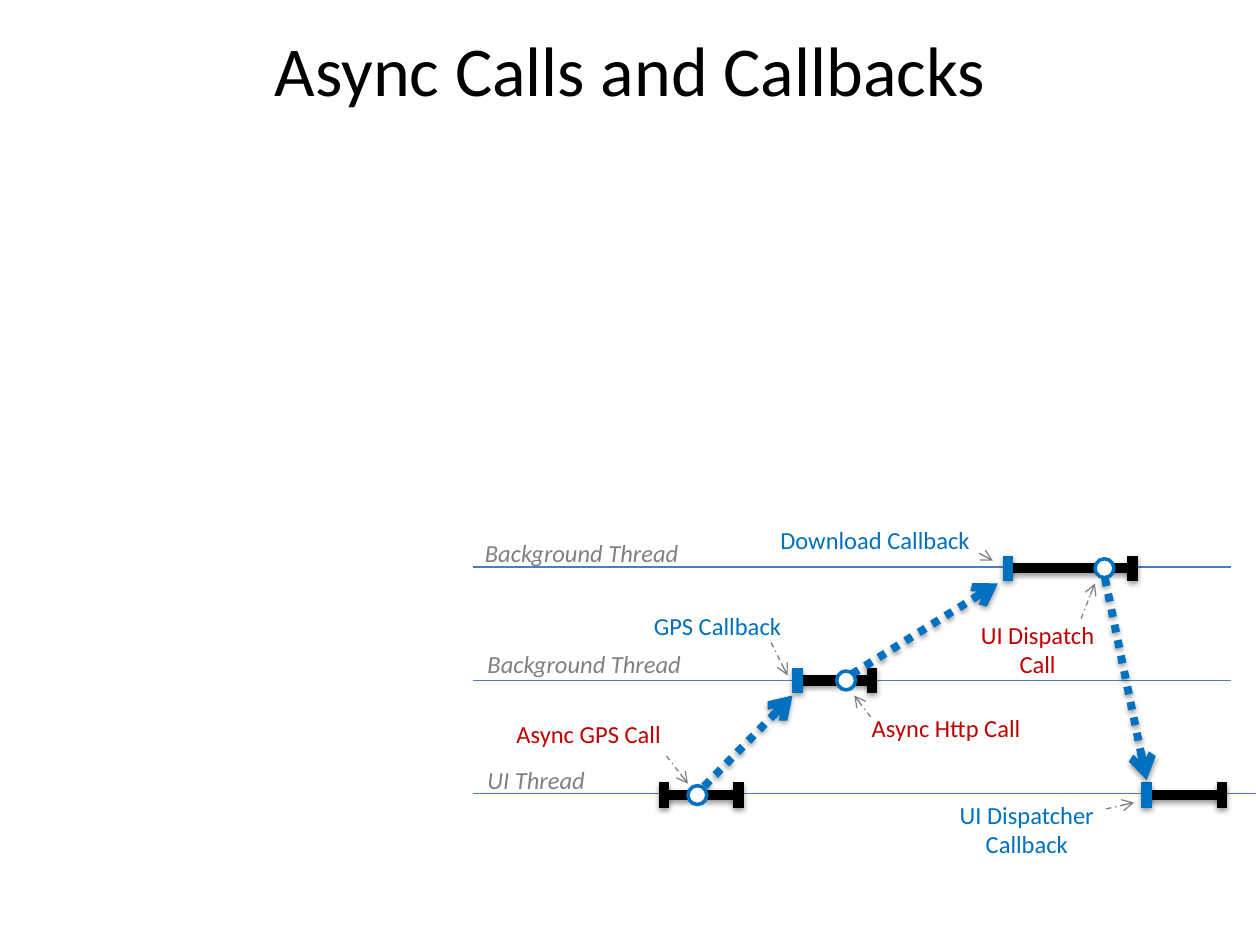
"""Build a timeline slide of asynchronous calls and callbacks across threads."""
import dataclasses
import typing

import lxml.etree
import pptx
import pptx.dml.color
import pptx.enum.dml
import pptx.enum.shapes
import pptx.enum.text
import pptx.oxml
import pptx.oxml.ns
import pptx.util

Point = typing.Tuple[float, float]
ALIGN = pptx.enum.text.PP_ALIGN
DASH = pptx.enum.dml.MSO_LINE
COLUMNS, ROWS = 100, 75
TOP_ROW, MIDDLE_ROW, BOTTOM_ROW = 45, 54, 63
CAP_HALF = 1
DOT_SIZE = 1.5


@dataclasses.dataclass(frozen=True)
class Theme:
    """Colours, font, type sizes and line widths."""
    font: str = "Calibri"
    title_size: float = 40
    label_size: float = 14
    black: str = "000000"
    white: str = "FFFFFF"
    thread: str = "4B7EBC"
    muted: str = "808080"
    callback: str = "0070C0"
    call: str = "C00000"
    thin: float = 0.75
    outline: float = 2
    flow: float = 4.5
    bar: float = 6


THEME = Theme()


@dataclasses.dataclass(frozen=True)
class Thread:
    """A named thread line with its label's corner."""
    name: str
    row: float
    end: float
    label_at: Point
    label_width: float


@dataclasses.dataclass(frozen=True)
class Run:
    """A stretch of work on a thread, with the column of the call it makes."""
    row: float
    start: float
    end: float
    start_color: str
    call: typing.Optional[float] = None


@dataclasses.dataclass(frozen=True)
class Label:
    """A caption and the pointer that leads from it."""
    text: str
    color: str
    at: Point
    size: Point
    pointer: typing.Tuple[Point, Point]
    align: typing.Any = ALIGN.CENTER


THREADS = (
    Thread("Background Thread", TOP_ROW, 97.7, (37.5, 42.2), 17.8),
    Thread("Background Thread", MIDDLE_ROW, 97.7, (37.7, 51), 17.8),
    Thread("UI Thread", BOTTOM_ROW, 99.7, (37.7, 60.2), 9.9),
)
RUNS = (
    Run(BOTTOM_ROW + 0.1, 52.7, 58.6, THEME.black, 55.35),
    Run(MIDDLE_ROW, 63.3, 69.2, THEME.callback, 67.15),
    Run(TOP_ROW + 0.1, 80, 89.9, THEME.callback, 87.65),
    Run(BOTTOM_ROW + 0.1, 91, 97, THEME.callback),
)
FLOWS = (
    ((55.9, 62.4), (62.9, 55.2)),
    ((67.6, 53.5), (79.2, 46.3)),
    ((87.7, 45.9), (91, 61.9)),
)
LABELS = (
    Label("Async GPS Call", THEME.call, (40, 56.6), (14.1, 3.4), ((52.9, 60), (54.6, 62.2)), ALIGN.LEFT),
    Label("GPS Callback", THEME.callback, (50.6, 48), (12.7, 3.4), ((61.2, 51), (62.5, 53.6))),
    Label("Async Http Call", THEME.call, (68.2, 56.1), (14.3, 3.4), ((69.1, 56.9), (67.8, 55.2)), ALIGN.LEFT),
    Label("Download Callback", THEME.callback, (60.7, 41.2), (17.5, 3.4), ((77.7, 43.9), (78.8, 44.5))),
    Label("UI Dispatch\nCall", THEME.call, (76.5, 48.7), (11.7, 5.7), ((85.8, 49.1), (86.9, 46.3))),
    Label("UI Dispatcher\nCallback", THEME.callback, (75, 63), (13, 5.7), ((87.8, 64.2), (90, 63.7))),
)


def grid(cells: float) -> int:
    """Convert grid cells to a length."""
    return pptx.util.Inches(cells * 10 / COLUMNS)


def rgb(color: str) -> pptx.dml.color.RGBColor:
    """Convert a hexadecimal colour."""
    return pptx.dml.color.RGBColor.from_string(color)


def write_text(frame, text: str, *, size: float, color: str, align=ALIGN.LEFT, italic: bool = False) -> None:
    """Fill a text frame with one formatted paragraph for each line."""
    frame.text = text
    for paragraph in frame.paragraphs:
        paragraph.alignment = align
        font = paragraph.runs[0].font
        font.name, font.size, font.italic = THEME.font, pptx.util.Pt(size), italic
        font.color.rgb = rgb(color)


def add_label(slide, text: str, at: Point, size: Point, *, color: str, align=ALIGN.LEFT, italic: bool = False) -> None:
    """Add an unwrapped caption."""
    box = slide.shapes.add_textbox(*map(grid, at + size))
    box.text_frame.word_wrap = False
    box.text_frame.auto_size = pptx.enum.text.MSO_AUTO_SIZE.SHAPE_TO_FIT_TEXT
    write_text(box.text_frame, text, size=THEME.label_size, color=color, align=align, italic=italic)


def add_line(slide, start: Point, end: Point, *, color: str, width: float,
             dash=None, arrow: bool = False, shadow: bool = False) -> None:
    """Add a straight line with optional dashes, arrowhead and shadow."""
    connector = slide.shapes.add_connector(
        pptx.enum.shapes.MSO_CONNECTOR.STRAIGHT, *map(grid, start + end))
    connector.line.color.rgb = rgb(color)
    connector.line.width = pptx.util.Pt(width)
    if dash is not None:
        connector.line.dash_style = dash
    name = pptx.oxml.ns.qn
    properties = connector._element.spPr
    if arrow:
        lxml.etree.SubElement(properties.find(name("a:ln")), name("a:tailEnd"), type="arrow")
    effects = lxml.etree.SubElement(properties, name("a:effectLst"))
    if shadow:
        outer = lxml.etree.SubElement(
            effects, name("a:outerShdw"), blurRad=str(pptx.util.Pt(3.1)),
            dist=str(pptx.util.Pt(1.6)), dir="5400000", rotWithShape="0")
        shade = lxml.etree.SubElement(outer, name("a:srgbClr"), val=THEME.black)
        lxml.etree.SubElement(shade, name("a:alpha"), val="38000")


def add_run(slide, run: Run) -> None:
    """Draw a run as a bar between two caps."""
    add_line(slide, (run.start, run.row), (run.end, run.row), color=THEME.black, width=THEME.bar, shadow=True)
    for column, color in ((run.start, run.start_color), (run.end, THEME.black)):
        add_line(slide, (column, run.row - CAP_HALF), (column, run.row + CAP_HALF),
                 color=color, width=THEME.bar, shadow=True)


def add_dot(slide, column: float, row: float) -> None:
    """Mark a call with a ring centred on a grid point."""
    dot = slide.shapes.add_shape(
        pptx.enum.shapes.MSO_SHAPE.OVAL, grid(column - DOT_SIZE / 2), grid(row - DOT_SIZE / 2),
        grid(DOT_SIZE), grid(DOT_SIZE))
    dot.shadow.inherit = False
    dot.fill.solid()
    dot.fill.fore_color.rgb = rgb(THEME.white)
    dot.line.color.rgb = rgb(THEME.callback)
    dot.line.width = pptx.util.Pt(THEME.outline)


def main() -> None:
    """Build and save the slide."""
    presentation = pptx.Presentation()
    presentation.slide_width, presentation.slide_height = grid(COLUMNS), grid(ROWS)
    slide = presentation.slides.add_slide(presentation.slide_layouts[5])
    title = slide.shapes.title
    title.left, title.top, title.width, title.height = map(grid, (5, 1.7, 90, 7.5))
    title.text_frame.vertical_anchor = pptx.enum.text.MSO_ANCHOR.MIDDLE
    write_text(title.text_frame, "Async Calls and Callbacks", size=THEME.title_size,
               color=THEME.black, align=ALIGN.CENTER)
    for thread in THREADS:
        add_line(slide, (37.5, thread.row), (thread.end, thread.row), color=THEME.thread, width=THEME.thin)
        add_label(slide, thread.name, thread.label_at, (thread.label_width, 3.4), color=THEME.muted, italic=True)
    for run in RUNS:
        add_run(slide, run)
    for start, end in FLOWS:
        add_line(slide, start, end, color=THEME.callback, width=THEME.flow,
                 dash=DASH.ROUND_DOT, arrow=True, shadow=True)
    for run in RUNS:
        if run.call is not None:
            add_dot(slide, run.call, run.row)
    for label in LABELS:
        add_label(slide, label.text, label.at, label.size, color=label.color, align=label.align)
        add_line(slide, *label.pointer, color=THEME.muted, width=THEME.thin, dash=DASH.DASH_DOT, arrow=True)
    presentation.save("out.pptx")


if __name__ == "__main__":
    main()
